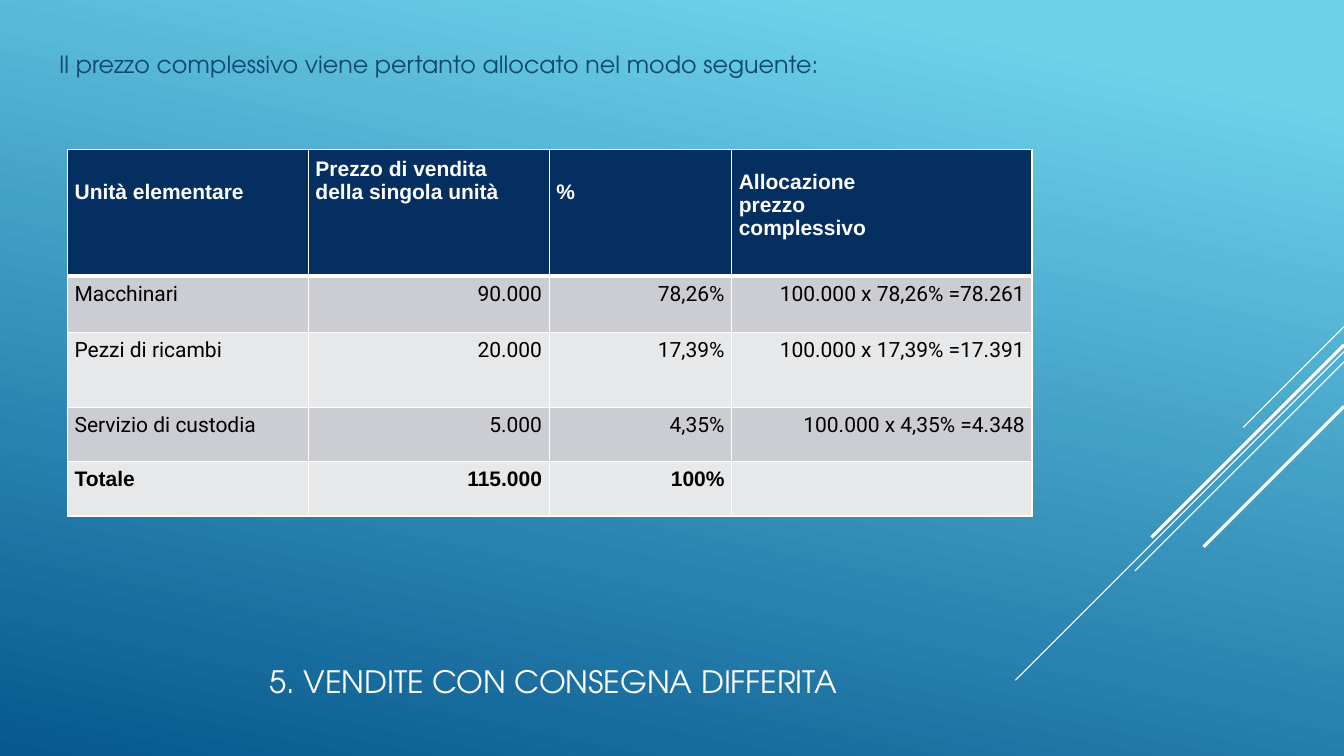
from dataclasses import dataclass

from lxml.etree import SubElement
from pptx import Presentation
from pptx.dml.color import RGBColor
from pptx.enum.shapes import MSO_CONNECTOR as Connector
from pptx.enum.text import MSO_ANCHOR as Anchor, PP_ALIGN as Align
from pptx.oxml.ns import qn
from pptx.slide import Slide
from pptx.table import _Cell as Cell
from pptx.text.text import _Paragraph as Paragraph
from pptx.util import Cm, Pt

COLORS = {
    "sky": "6ED2EB",
    "ocean": "06588E",
    "white": "FFFFFF",
    "black": "000000",
    "navy": "052F61",
    "ink": "0F496F",
    "band_dark": "CCCDD2",
    "band_light": "E7E8EA",
}
HEADING_FONT = "TeX Gyre Adventor"
SLIDE_WIDTH, SLIDE_HEIGHT = 33.87, 19.05
CELL_INDENT = 0.18
THIN, THICK = 1, 3


@dataclass(frozen=True)
class Style:
    font: str
    size: float
    color: str
    bold: bool = False


@dataclass(frozen=True)
class Caption:
    text: str
    left: float
    top: float
    width: float
    height: float
    style: Style
    align: Align
    anchor: Anchor


@dataclass(frozen=True)
class Ray:
    top: float
    reach: float
    weight: float


@dataclass(frozen=True)
class Heading:
    text: str
    width: float
    margin_top: float
    margin_right: float


HEADER_STYLE = Style("Arial", 15, "white", True)
BODY_STYLE = Style("Roboto", 15, "black")
TOTAL_STYLE = Style("Arial", 15, "black", True)

RAYS = [
    Ray(8.23, 2.54, 0.75),
    Ray(8.86, 8.28, 0.75),
    Ray(9.12, 5.27, 0.75),
    Ray(8.69, 4.85, 2.25),
    Ray(10.24, 3.54, 2.25),
]
CAPTIONS = [
    Caption("5. VENDITE CON CONSEGNA DIFFERITA", 1.9, 16.18, 24.1, 1.57,
            Style(HEADING_FONT, 22, "white"), Align.CENTER, Anchor.BOTTOM),
    Caption("Il prezzo complessivo viene pertanto allocato nel modo seguente:",
            1.24, 1.12, 21.41, 2.46,
            Style(HEADING_FONT, 17, "ink"), Align.LEFT, Anchor.TOP),
]
HEADINGS = [
    Heading("Unità elementare", 6.07, 0.8, 0),
    Heading("Prezzo di vendita della singola unità", 6.07, 0.2, 0.8),
    Heading("%", 4.6, 0.8, 0),
    Heading("Allocazione prezzo complessivo", 7.57, 0.53, 3.4),
]
ROW_HEIGHTS = [3.2, 1.42, 1.88, 1.37, 1.37]
BODY = [
    ["Macchinari", "90.000", "78,26%", "100.000 x 78,26% =78.261"],
    ["Pezzi di ricambi", "20.000", "17,39%", "100.000 x 17,39% =17.391"],
    ["Servizio di custodia", "5.000", "4,35%", "100.000 x 4,35% =4.348"],
    ["Totale", "115.000", "100%", ""],
]


def rgb(name: str) -> RGBColor:
    return RGBColor.from_string(COLORS[name])


def add_text(para: Paragraph, text: str, style: Style, align: Align) -> None:
    para.alignment = align
    span = para.add_run()
    span.text = text
    span.font.name = style.font
    span.font.size = Pt(style.size)
    span.font.bold = style.bold
    span.font.color.rgb = rgb(style.color)


def paint_background(page: Slide) -> None:
    fill = page.background.fill
    fill.gradient()
    fill.gradient_angle = 258
    for stop, color, position in zip(fill.gradient_stops, ("sky", "ocean"), (0.1, 1)):
        stop.color.rgb = rgb(color)
        stop.position = position


def draw_ray(page: Slide, ray: Ray) -> None:
    line = page.shapes.add_connector(
        Connector.STRAIGHT, Cm(SLIDE_WIDTH), Cm(ray.top),
        Cm(SLIDE_WIDTH - ray.reach), Cm(ray.top + ray.reach))
    line.line.color.rgb = rgb("white")
    line.line.width = Pt(ray.weight)
    SubElement(line._element.spPr, qn("a:effectLst"))


def draw_caption(page: Slide, caption: Caption) -> None:
    box = page.shapes.add_textbox(
        Cm(caption.left), Cm(caption.top), Cm(caption.width), Cm(caption.height))
    frame = box.text_frame
    frame.word_wrap = True
    frame.vertical_anchor = caption.anchor
    add_text(frame.paragraphs[0], caption.text, caption.style, caption.align)


def format_cell(cell: Cell, fill: str, top_line: float, bottom_line: float) -> None:
    properties = cell._tc.get_or_add_tcPr()
    weights = {"lnL": THIN, "lnR": THIN, "lnT": top_line, "lnB": bottom_line}
    for side, weight in weights.items():
        border = SubElement(properties, qn(f"a:{side}"), w=str(Pt(weight)))
        solid = SubElement(border, qn("a:solidFill"))
        SubElement(solid, qn("a:srgbClr"), val=COLORS["white"])
    cell.fill.solid()
    cell.fill.fore_color.rgb = rgb(fill)
    cell.margin_left = Cm(CELL_INDENT)
    cell.margin_right = Cm(CELL_INDENT)
    cell.margin_top = Cm(0.15)
    cell.margin_bottom = Cm(0)


def draw_table(page: Slide) -> None:
    table = page.shapes.add_table(
        len(ROW_HEIGHTS), len(HEADINGS), Cm(1.7), Cm(3.76),
        Cm(sum(heading.width for heading in HEADINGS)), Cm(sum(ROW_HEIGHTS))).table
    for row, height in zip(table.rows, ROW_HEIGHTS):
        row.height = Cm(height)
    for index, heading in enumerate(HEADINGS):
        table.columns[index].width = Cm(heading.width)
        cell = table.cell(0, index)
        format_cell(cell, "navy", THIN, THICK)
        cell.margin_top = Cm(heading.margin_top)
        cell.margin_right = Cm(heading.margin_right)
        add_text(cell.text_frame.paragraphs[0], heading.text, HEADER_STYLE, Align.LEFT)
    for row_index, values in enumerate(BODY, start=1):
        style = TOTAL_STYLE if row_index == len(BODY) else BODY_STYLE
        fill = "band_dark" if row_index % 2 else "band_light"
        for index, value in enumerate(values):
            cell = table.cell(row_index, index)
            format_cell(cell, fill, THICK if row_index == 1 else THIN, THIN)
            if value:
                align = Align.RIGHT if index else Align.LEFT
                add_text(cell.text_frame.paragraphs[0], value, style, align)


def main() -> None:
    deck = Presentation()
    deck.slide_width, deck.slide_height = Cm(SLIDE_WIDTH), Cm(SLIDE_HEIGHT)
    page = deck.slides.add_slide(deck.slide_layouts[6])
    paint_background(page)
    for ray in RAYS:
        draw_ray(page, ray)
    draw_table(page)
    for caption in CAPTIONS:
        draw_caption(page, caption)
    deck.save("out.pptx")


if __name__ == "__main__":
    main()
